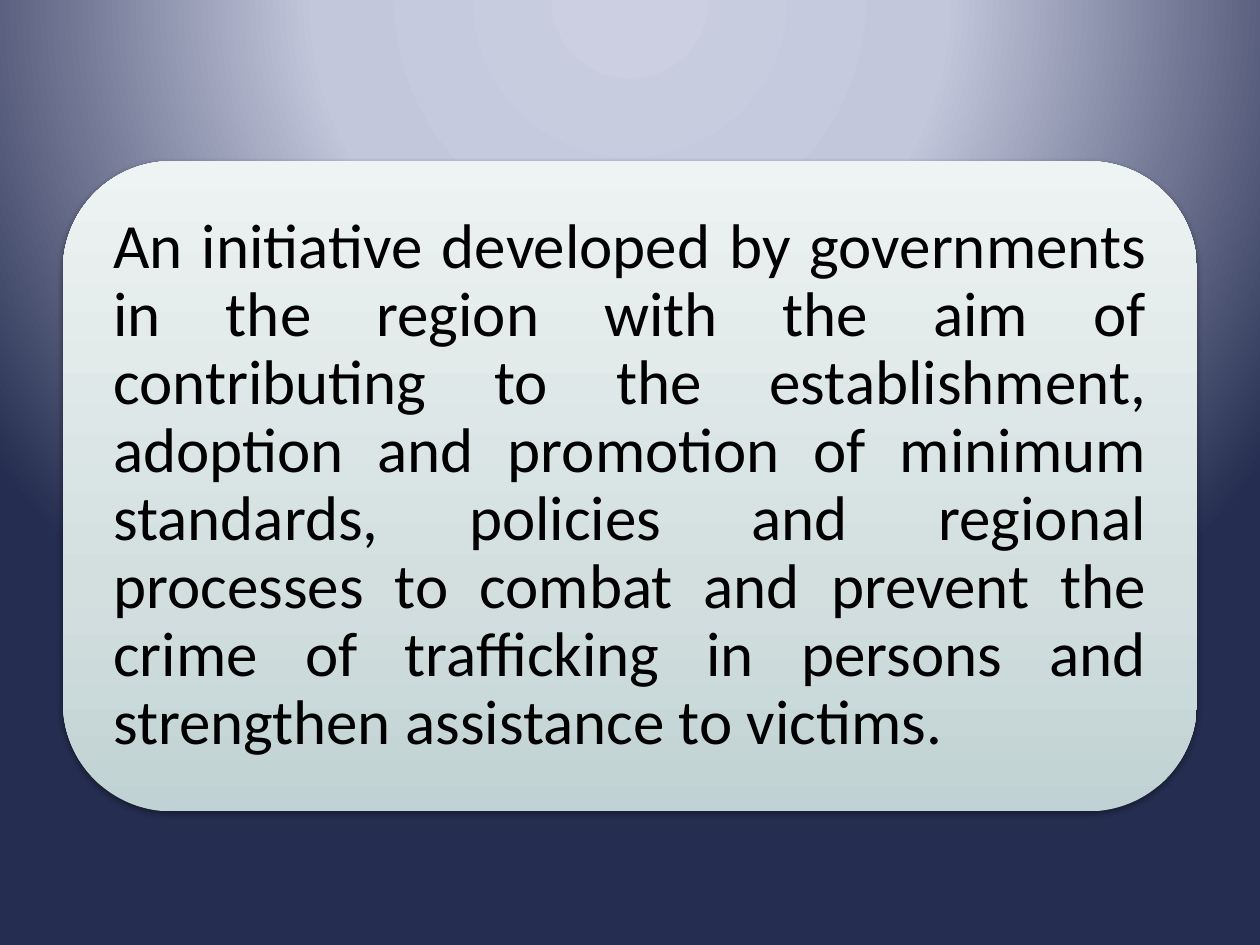
from typing import NamedTuple

from lxml import etree
from pptx import Presentation
from pptx.dml.color import RGBColor
from pptx.enum import shapes, text
from pptx.oxml import ns
from pptx.util import Inches, Pt

BLACK = RGBColor(0x00, 0x00, 0x00)
SKY_LIGHT = RGBColor(0xCB, 0xCF, 0xE1)
SKY_MID = RGBColor(0xC3, 0xC7, 0xDC)
SKY_DARK = RGBColor(0x25, 0x2D, 0x50)
CARD_DARK = RGBColor(0xC0, 0xD2, 0xD3)
CARD_MID = RGBColor(0xD3, 0xDF, 0xDF)
CARD_LIGHT = RGBColor(0xEE, 0xF3, 0xF3)

STATEMENT = (
    "An initiative developed by governments in the region with the aim of "
    "contributing to the establishment, adoption and promotion of minimum "
    "standards, policies and regional processes to combat and prevent the "
    "crime of trafficking in persons and strengthen assistance to victims."
)


class Stop(NamedTuple):
    percent: int
    color: RGBColor


class Box(NamedTuple):
    left: float
    top: float
    width: float
    height: float

    def inset(self, gap: float) -> "Box":
        return Box(self.left + gap, self.top + gap,
                   self.width - 2 * gap, self.height - 2 * gap)

    def lengths(self) -> list[Inches]:
        return [Inches(side) for side in self]


SKY = [Stop(0, SKY_LIGHT), Stop(40, SKY_MID), Stop(100, SKY_DARK)]
CARD = [Stop(0, CARD_DARK), Stop(35, CARD_MID), Stop(100, CARD_LIGHT)]
CARD_BOX = Box(0.5, 1.28, 9, 5.16)


def add_node(parent, tag: str, **attributes):
    node = etree.SubElement(parent, ns.qn(tag))
    for name, value in attributes.items():
        node.set(name, str(value))
    return node


def swap_solid_for_gradient(properties, stops: list[Stop]):
    """Replace the solid fill in properties and return the gradient, still without a direction."""
    solid = properties.find(ns.qn("a:solidFill"))
    gradient = etree.Element(ns.qn("a:gradFill"), rotWithShape="1")
    properties.replace(solid, gradient)
    stop_list = add_node(gradient, "a:gsLst")
    for stop in stops:
        position = add_node(stop_list, "a:gs", pos=stop.percent * 1000)
        add_node(position, "a:srgbClr", val=stop.color)
    return gradient


def paint_background(slide) -> None:
    slide.background.fill.solid()
    properties = slide.element.find(".//" + ns.qn("p:bgPr"))
    gradient = swap_solid_for_gradient(properties, SKY)
    circle = add_node(gradient, "a:path", path="circle")
    add_node(circle, "a:fillToRect", l=50000, t=-80000, r=50000, b=180000)


def add_soft_shadow(shape) -> None:
    shape.shadow.inherit = False
    effects = shape.element.spPr.find(ns.qn("a:effectLst"))
    shadow = add_node(effects, "a:outerShdw", blurRad=Pt(3.1), dist=Pt(1.6),
                      dir=90 * 60000, rotWithShape=0)
    color = add_node(shadow, "a:srgbClr", val=BLACK)
    add_node(color, "a:alpha", val=38000)


def add_card(slide, box: Box) -> None:
    card = slide.shapes.add_shape(
        shapes.MSO_SHAPE.ROUNDED_RECTANGLE, *box.lengths())
    card.fill.solid()
    gradient = swap_solid_for_gradient(card.element.spPr, CARD)
    add_node(gradient, "a:lin", ang=270 * 60000, scaled=0)
    card.line.fill.background()
    add_soft_shadow(card)


def add_statement(slide, box: Box) -> None:
    frame = slide.shapes.add_textbox(*box.lengths()).text_frame
    frame.word_wrap = True
    frame.vertical_anchor = text.MSO_ANCHOR.MIDDLE
    frame.margin_left = frame.margin_right = Inches(0.15)
    frame.margin_top = frame.margin_bottom = Inches(0.15)
    paragraph = frame.paragraphs[0]
    paragraph.alignment = text.PP_ALIGN.JUSTIFY
    paragraph.line_spacing = 0.9
    run = paragraph.add_run()
    run.text = STATEMENT
    run.font.name = "Calibri"
    run.font.size = Pt(36)
    run.font.color.rgb = BLACK


def main() -> None:
    deck = Presentation()
    deck.slide_width, deck.slide_height = Inches(10), Inches(7.5)
    slide = deck.slides.add_slide(deck.slide_layouts.get_by_name("Blank"))
    paint_background(slide)
    add_card(slide, CARD_BOX)
    add_statement(slide, CARD_BOX.inset(0.25))
    deck.save("out.pptx")


if __name__ == "__main__":
    main()
